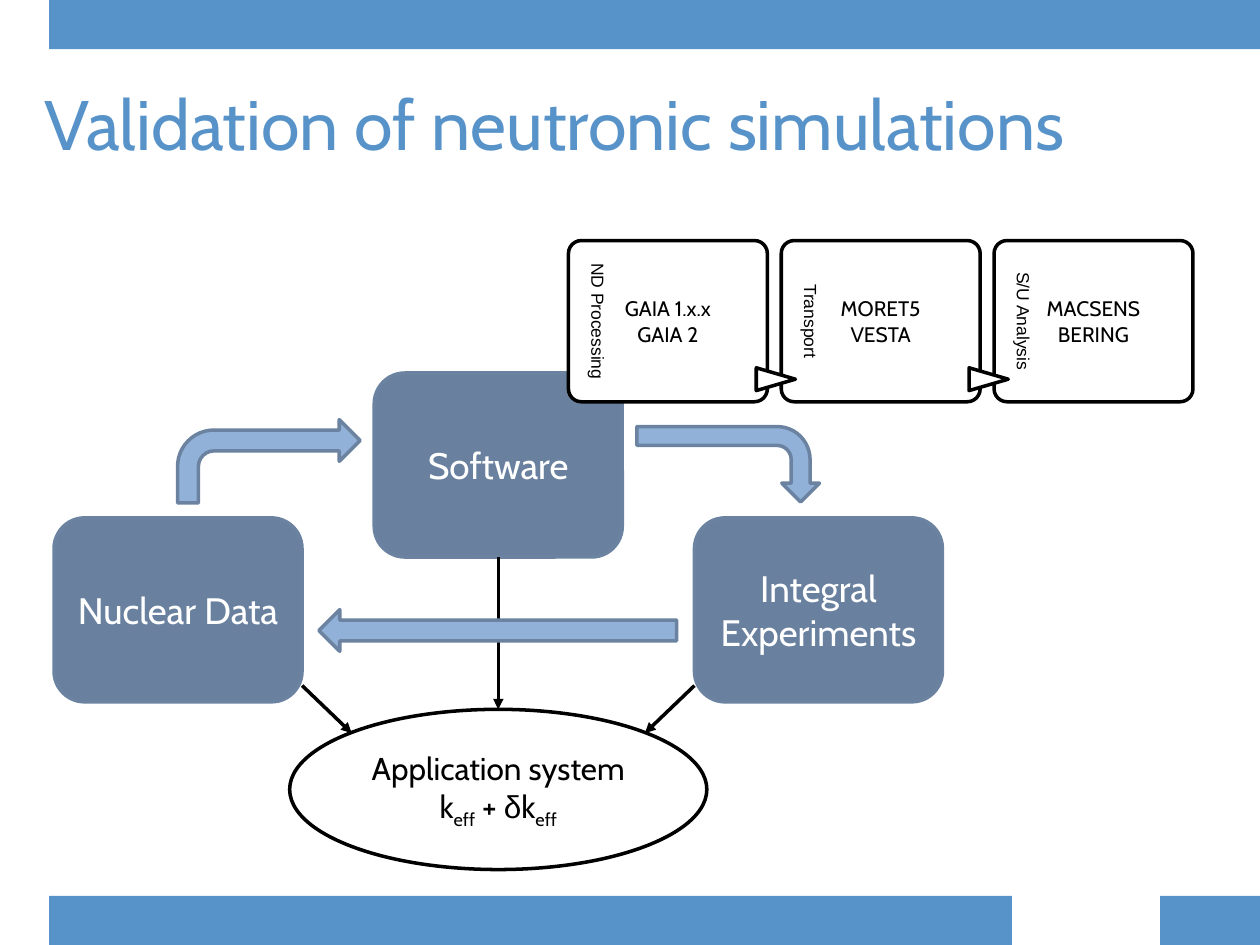
from lxml import etree
from pptx import Presentation
from pptx.dml.color import RGBColor
from pptx.enum.shapes import MSO_CONNECTOR, MSO_SHAPE
from pptx.enum.text import MSO_ANCHOR, PP_ALIGN
from pptx.oxml.ns import qn
from pptx.util import Cm, Pt

RECT, ROUND, OVAL = MSO_SHAPE.RECTANGLE, MSO_SHAPE.ROUNDED_RECTANGLE, MSO_SHAPE.OVAL
BENT, LEFT_ARROW = MSO_SHAPE.BENT_ARROW, MSO_SHAPE.LEFT_ARROW
TRIANGLE = MSO_SHAPE.ISOSCELES_TRIANGLE
STRAIGHT = MSO_CONNECTOR.STRAIGHT
CENTER, LEFT = PP_ALIGN.CENTER, PP_ALIGN.LEFT
MIDDLE, TOP = MSO_ANCHOR.MIDDLE, MSO_ANCHOR.TOP

BLUE, SLATE, EDGE, SKY = "5793C9", "69819F", "6B83A1", "91B1D9"
BLACK, WHITE = "000000", "FFFFFF"
SLIDE_W, SLIDE_H = 25.4, 19.05
BAR = 0.99
NODE_W, NODE_H = 5.0, 3.71


def color(value):
    return RGBColor.from_string(value)


def write(tf, lines, size=12, font="Cabin", fill=BLACK, align=CENTER, anchor=MIDDLE):
    """Fill a text frame; a line is a string or a list of (text, font, baseline)."""
    tf.word_wrap = True
    tf.vertical_anchor = anchor
    for i, line in enumerate(lines):
        p = tf.paragraphs[0] if i == 0 else tf.add_paragraph()
        p.alignment = align
        runs = [(line, font, 0)] if isinstance(line, str) else line
        for text, face, baseline in runs:
            r = p.add_run()
            r.text = text
            r.font.size, r.font.name = Pt(size), face
            r.font.color.rgb = color(fill)
            if baseline:
                r.font._element.set("baseline", str(baseline * 1000))


def add_shape(s, kind, x, y, w, h, fill=WHITE, line=BLACK, rotation=0):
    sp = s.shapes.add_shape(kind, Cm(x), Cm(y), Cm(w), Cm(h))
    sp.shadow.inherit = False
    sp.fill.solid()
    sp.fill.fore_color.rgb = color(fill)
    if line:
        sp.line.color.rgb = color(line)
        sp.line.width = Pt(2)
    else:
        sp.line.fill.background()
    sp.rotation = rotation
    return sp


def add_arrow(s, x1, y1, x2, y2):
    c = s.shapes.add_connector(STRAIGHT, Cm(x1), Cm(y1), Cm(x2), Cm(y2))
    c.line.color.rgb = color(BLACK)
    c.line.width = Pt(2)
    etree.SubElement(c.line._get_or_add_ln(), qn("a:tailEnd"), type="triangle")
    etree.SubElement(c._element.spPr, qn("a:effectLst"))
    return c


def add_frame(s):
    """Draw the bars along the top and bottom edges."""
    bottom = SLIDE_H - BAR
    for x, y, w in ((BAR, 0, SLIDE_W - BAR), (BAR, bottom, 19.41), (23.39, bottom, 2.01)):
        add_shape(s, RECT, x, y, w, BAR, BLUE, None)


def add_title(s, x, y, w, h):
    title = s.shapes.title
    title.left, title.top, title.width, title.height = Cm(x), Cm(y), Cm(w), Cm(h)
    tf = title.text_frame
    tf.margin_left = Cm(0.2)
    write(tf, ["Validation of neutronic simulations"], size=40, fill=BLUE,
          align=LEFT, anchor=TOP)


def add_node(s, x, y, text):
    sp = add_shape(s, ROUND, x, y, NODE_W, NODE_H, SLATE, EDGE)
    write(sp.text_frame, [text], size=21, fill=WHITE)
    return sp


def add_cycle(s, x, y):
    """Draw the three-node loop and the application system that it feeds."""
    step, drop = 6.455, 2.92
    right = x + 2 * step
    add_node(s, x, y + drop, "Nuclear Data")
    add_node(s, right, y + drop, "Integral Experiments")
    software = add_node(s, x + step, y, "Software")

    system = add_shape(s, OVAL, x + 4.75, y + 6.78, 8.41, 3.23)
    write(system.text_frame, [[
        ("Application system k", "Cabin", 0), ("eff", "Cabin", -25),
        (" + ", "Cabin", 0), ("δ", "Arial", 0),
        ("k", "Cabin", 0), ("eff", "Cabin", -25)]], size=18)

    link = add_arrow(s, 0, 0, 0, 0)
    link.begin_connect(software, 2)
    link.end_connect(system, 0)
    for corner, direction in ((x + NODE_W, 1), (right, -1)):
        add_arrow(s, corner, y + 6.3, corner + direction, y + 7.26)

    add_shape(s, LEFT_ARROW, x + 5.34, y + 4.77, 7.21, 0.84, SKY, EDGE)
    add_shape(s, BENT, x + 2.49, y + 0.94, 3.68, 1.68, SKY, EDGE)
    add_shape(s, BENT, x + 12.83, y, 1.52, 3.68, SKY, EDGE, rotation=90)


def add_card(s, x, y, w, h, label, codes):
    card = add_shape(s, ROUND, x, y, w, h)
    card.adjustments[0] = 0.08
    write(card.text_frame, codes)
    tf = s.shapes.add_textbox(Cm(x), Cm(y), Cm(0.94), Cm(h)).text_frame
    write(tf, [label], size=10, font="Arial", anchor=TOP)
    tf._txBody.bodyPr.set("vert", "vert")


def add_code_chain(s, x, y):
    """Draw the row of code cards with a pointer between neighbours."""
    w, h, step = 4.01, 3.25, 4.29
    cards = (
        ("ND Processing", ["GAIA 1.x.x", "GAIA 2"]),
        ("Transport", ["MORET5", "VESTA"]),
        ("S/U Analysis", ["MACSENS", "BERING"]),
    )
    lefts = [x + i * step for i in range(len(cards))]
    for left, (label, codes) in zip(lefts, cards):
        add_card(s, left, y, w, h, label, codes)
    for left in lefts[1:]:
        add_shape(s, TRIANGLE, left - 0.34, y + 2.4, 0.46, 0.79, rotation=90)


def main():
    prs = Presentation()
    prs.slide_width, prs.slide_height = Cm(SLIDE_W), Cm(SLIDE_H)
    s = prs.slides.add_slide(prs.slide_layouts[5])
    add_frame(s)
    add_title(s, 0.69, 1.5, 24.31, 2.41)
    add_cycle(s, 1.09, 7.52)
    add_code_chain(s, 11.46, 4.85)
    prs.save("out.pptx")


if __name__ == "__main__":
    main()
